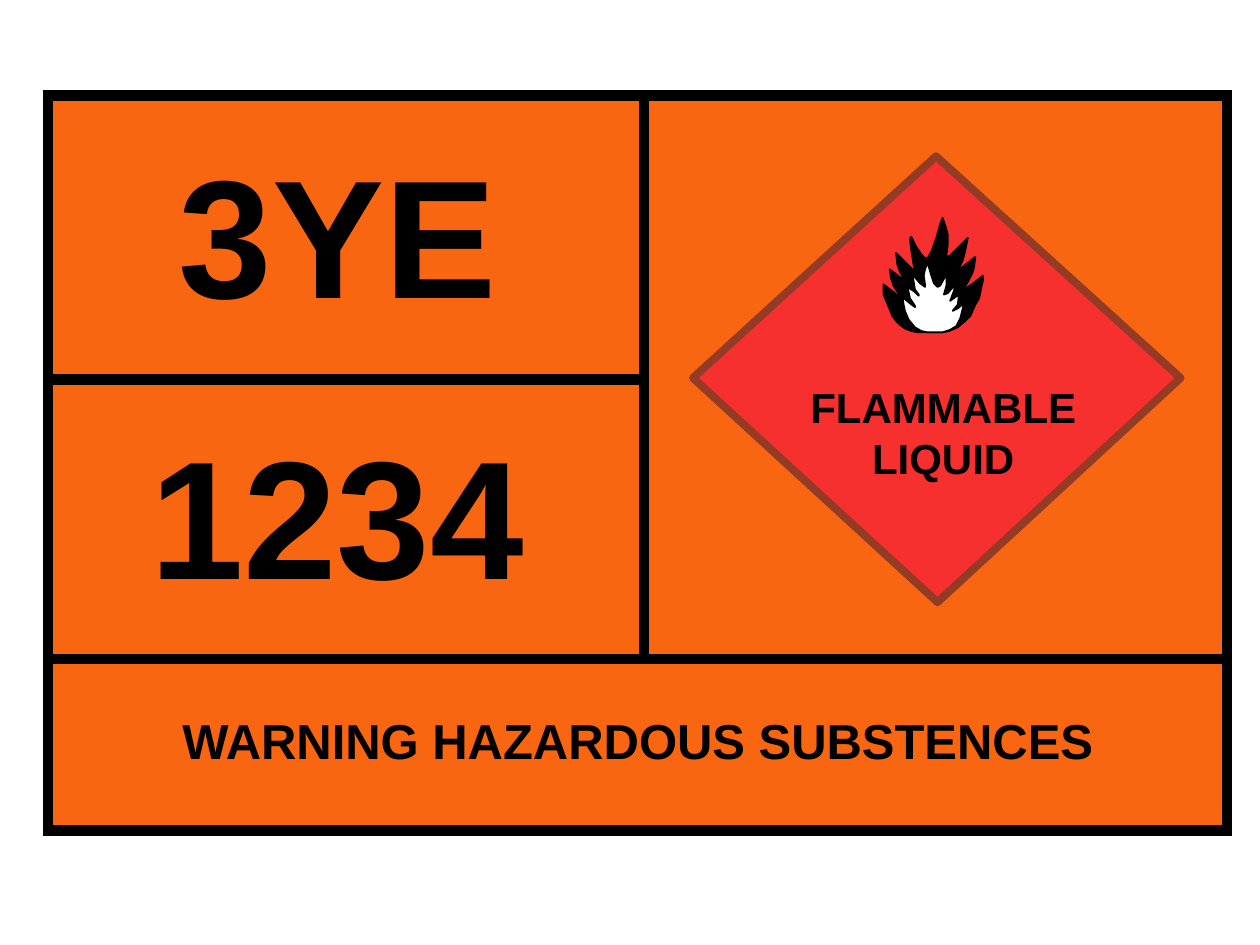
from lxml import etree
from pptx import Presentation
from pptx.dml.color import RGBColor
from pptx.enum.shapes import MSO_CONNECTOR as Connector, MSO_SHAPE as Shape
from pptx.enum.text import PP_ALIGN as Align
from pptx.oxml.ns import qn
from pptx.util import Cm, Pt

COLORS = {"ink": "000000", "panel": "F96611", "diamond": "F6302F",
          "diamond_edge": "933B25", "flame_core": "FFFFFF"}
FONT = "Arial"

# Flame outlines on a grid 80 units wide
FLAME_WIDTH = 80
FLAME_OUTER = [
    (64, 56), (67, 51), (69, 47), (71, 43), (72, 39), (73, 31), (63, 39), (58, 43),
    (60, 40), (63, 34), (65, 26), (67, 16), (63, 20), (53, 30), (51, 31), (50, 30),
    (51, 22), (51, 13), (50, 9), (47, 0), (45, 5), (42, 16), (38, 27), (35, 32),
    (33, 32), (30, 29), (26, 23), (22, 15), (21, 17), (22, 25), (24, 38), (25, 41),
    (23, 41), (19, 37), (13, 31), (10, 28), (11, 37), (13, 43), (17, 49), (18, 50),
    (13, 47), (5, 41), (6, 48), (8, 54), (13, 62), (12, 63), (8, 59), (0, 53),
    (0, 61), (3, 68), (7, 78), (10, 82), (13, 85), (17, 88), (22, 90), (27, 91),
    (47, 91), (52, 90), (59, 87), (65, 82), (69, 78), (73, 69), (76, 64), (78, 54),
    (79, 50), (79, 46), (70, 53), (64, 57), (63, 58)]
FLAME_CORE = [
    (25, 70), (21, 64), (20, 59), (19, 55), (25, 59), (28, 62), (28, 61), (25, 57),
    (24, 51), (23, 45), (29, 52), (33, 55), (33, 53), (32, 46), (33, 41), (35, 36),
    (36, 39), (38, 46), (40, 52), (43, 55), (45, 54), (50, 45), (50, 54), (48, 61),
    (51, 60), (57, 53), (56, 58), (53, 66), (60, 61), (59, 69), (55, 74), (59, 72),
    (64, 68), (63, 72), (61, 80), (58, 86), (53, 89), (47, 91), (35, 91), (30, 90),
    (25, 87), (20, 81), (17, 74), (16, 69), (15, 63), (21, 68), (25, 71)]


def rgb(name):
    return RGBColor.from_string(COLORS[name])


def paint(shape, fill, edge, weight, join="round"):
    shape.shadow.inherit = False
    shape.fill.solid()
    shape.fill.fore_color.rgb = rgb(fill)
    shape.line.color.rgb = rgb(edge)
    shape.line.width = Pt(weight)
    etree.SubElement(shape.line._get_or_add_ln(), qn(f"a:{join}"))


def add_outline(shapes, points, left, top, scale):
    builder = shapes.build_freeform(*points[0], scale=scale)
    builder.add_line_segments(points[1:], close=True)
    return builder.convert_to_shape(left, top)


def add_label(shapes, text, size, left, top, width, height):
    label = shapes.add_textbox(left, top, width, height)
    frame = label.text_frame
    frame.word_wrap = False
    frame.text = text
    for paragraph in frame.paragraphs:
        paragraph.alignment = Align.CENTER
        for run in paragraph.runs:
            run.font.name = FONT
            run.font.size = Pt(size)
            run.font.bold = True
            run.font.color.rgb = rgb("ink")


def add_divider(shapes, x1, y1, x2, y2):
    divider = shapes.add_connector(Connector.STRAIGHT, x1, y1, x2, y2)
    divider.line.color.rgb = rgb("ink")
    divider.line.width = Pt(6)
    etree.SubElement(divider._element.spPr, qn("a:effectLst"))


def add_flame(shapes, left, top, width):
    flame = shapes.add_group_shape()
    for points, fill in ((FLAME_OUTER, "ink"), (FLAME_CORE, "flame_core")):
        outline = add_outline(flame.shapes, points, left, top, width / FLAME_WIDTH)
        paint(outline, fill, "ink", 1)


def add_hazard_diamond(shapes, left, top, width, height):
    """Hazard class sign: diamond with flame and class name."""
    unit = Cm(0.01)
    right, bottom = round(width / unit), round(height / unit)
    corners = [(right, 447), (490, 0), (0, 447), (493, bottom)]
    diamond = add_outline(shapes, corners, left, top, unit)
    paint(diamond, "diamond", "diamond_edge", 4.5)
    add_flame(shapes, left + Cm(3.84), top + Cm(1.24), Cm(2.03))
    add_label(shapes, "FLAMMABLE\nLIQUID", 24,
              left + Cm(2.11), top + Cm(4.42), Cm(5.87), Cm(2.29))


def add_hazard_panel(shapes, left, top, width, height):
    """Orange plate with action code, substance number, diamond and warning."""
    panel = shapes.add_shape(Shape.RECTANGLE, left, top, width, height)
    paint(panel, "panel", "ink", 6, join="miter")
    add_hazard_diamond(shapes, left + Cm(13), top + Cm(1.22), Cm(9.83), Cm(8.99))

    column_x = left + Cm(12.01)
    code_y, warning_y = top + Cm(5.72), top + Cm(11.35)
    add_divider(shapes, left, warning_y, left + width, warning_y)
    add_divider(shapes, column_x, warning_y, column_x, top)
    add_divider(shapes, left, code_y, column_x, code_y)

    for text, size, x, y, w, h in (
            ("3YE", 96, 2.38, 0.58, 6.91, 4.32),
            ("1234", 96, 1.8, 6.25, 8.05, 4.32),
            ("WARNING HAZARDOUS SUBSTENCES", 28, 2.41, 12.27, 18.95, 1.45)):
        add_label(shapes, text, size, left + Cm(x), top + Cm(y), Cm(w), Cm(h))


def main():
    deck = Presentation()
    deck.slide_width, deck.slide_height = Cm(25.4), Cm(19.05)
    slide = deck.slides.add_slide(deck.slide_layouts[6])
    add_hazard_panel(slide.shapes, Cm(0.97), Cm(1.93), Cm(23.77), Cm(14.81))
    deck.save("out.pptx")


if __name__ == "__main__":
    main()
